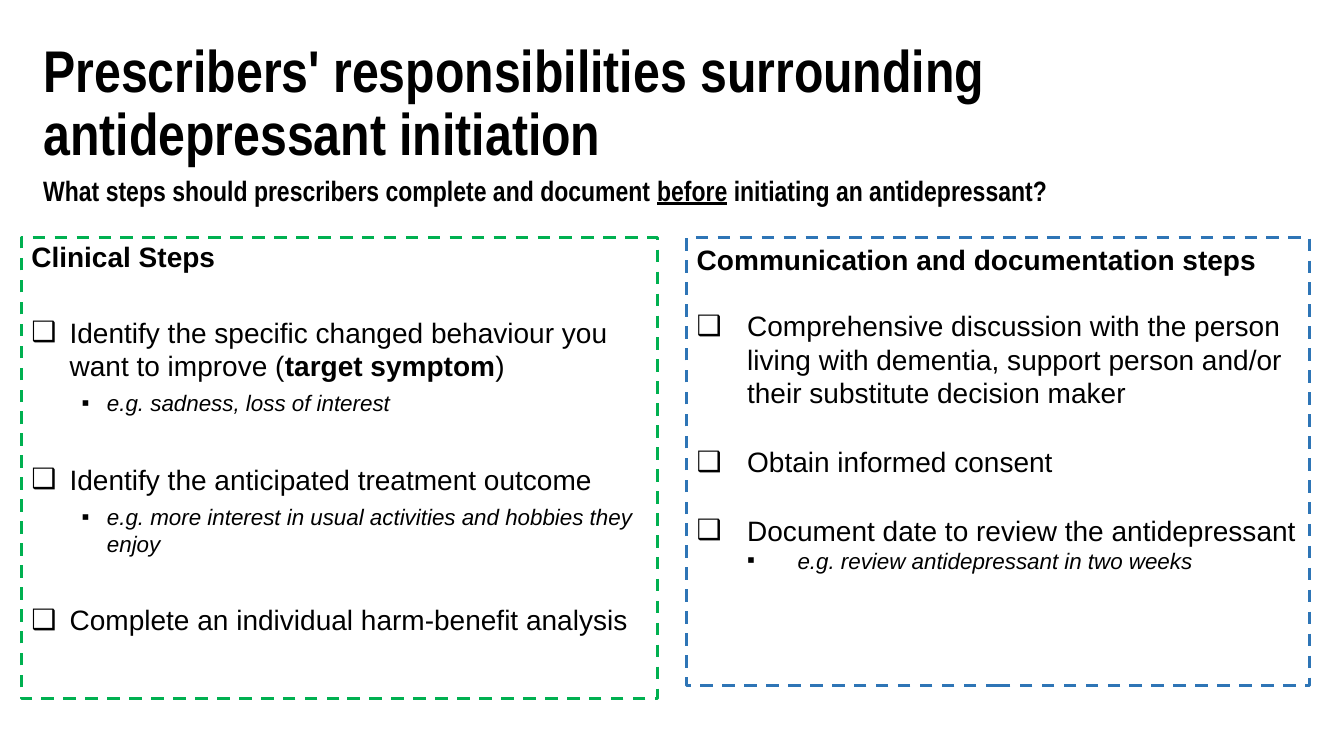
import pptx
import pptx.dml.color
import pptx.enum.dml
import pptx.enum.text
import pptx.oxml.ns
import pptx.util
import lxml.etree

SLIDE_WIDTH, SLIDE_HEIGHT = pptx.util.Inches(13.33), pptx.util.Inches(7.5)
BOX_TOP = 31.47
BOX, SQUARE = "❑", "▪"


def color(value):
    return pptx.dml.color.RGBColor.from_string(value)


class ResponsibilitySlide:
    """Style and element builders; places are percentages of the slide."""
    ink = "000000"
    heading_font, body_font = "Arial Narrow", "Arial"
    step_size, example_size = 20, 16

    def __init__(self, deck):
        self.page = deck.slides.add_slide(deck.slide_layouts.get_by_name("Two Content"))

    def place(self, shape, left, top, width, height):
        shape.left = int(SLIDE_WIDTH * left / 100)
        shape.top = int(SLIDE_HEIGHT * top / 100)
        shape.width = int(SLIDE_WIDTH * width / 100)
        shape.height = int(SLIDE_HEIGHT * height / 100)
        frame = shape.text_frame
        frame.word_wrap = True
        frame.auto_size = pptx.enum.text.MSO_AUTO_SIZE.NONE
        frame.vertical_anchor = pptx.enum.text.MSO_ANCHOR.TOP
        return frame

    def add_text(self, para, text, size, font, bold=False, italic=False, underline=False):
        """Fill a paragraph; text between * signs is underlined or else bold."""
        para.alignment = pptx.enum.text.PP_ALIGN.LEFT
        for index, part in enumerate(text.split("*")):
            marked = index % 2 == 1
            span = para.add_run()
            span.text = part
            span.font.name, span.font.size = font, pptx.util.Pt(size)
            span.font.color.rgb = color(self.ink)
            span.font.bold, span.font.italic = bold or marked, italic
            span.font.underline = underline and marked

    def bullet(self, para, char, margin, hanging):
        props = para._p.get_or_add_pPr()
        props.set("marL", str(pptx.util.Inches(margin)))
        props.set("indent", str(-pptx.util.Inches(hanging)))
        name = pptx.oxml.ns.qn
        if char:
            lxml.etree.SubElement(props, name("a:buFont"), typeface=self.body_font)
            lxml.etree.SubElement(props, name("a:buChar"), char=char)
        else:
            lxml.etree.SubElement(props, name("a:buNone"))

    def heading(self, shape, place, text, size):
        para = self.place(shape, *place).paragraphs[0]
        para.line_spacing, para.space_before = 0.9, pptx.util.Pt(0)
        self.add_text(para, text, size, self.heading_font, bold=True, underline=True)

    def title(self, place, text):
        self.heading(self.page.shapes.title, place, text, 42)

    def question(self, place, text):
        self.heading(self.page.shapes.add_textbox(0, 0, 0, 0), place, text, 20)

    def checklist(self, slot, place, outline, title, items, indents, title_spacing=1.0):
        """Dashed panel; items are (level, space before, text)."""
        panel = self.page.placeholders[slot]
        frame = self.place(panel, *place)
        panel.line.color.rgb = color(outline)
        panel.line.width = pptx.util.Pt(2.25)
        panel.line.dash_style = pptx.enum.dml.MSO_LINE.DASH

        para = frame.paragraphs[0]
        self.bullet(para, None, 0, 0)
        para.line_spacing, para.space_before = title_spacing, pptx.util.Pt(0)
        self.add_text(para, title, self.step_size, self.body_font, bold=True)

        for level, gap, text in items:
            para = frame.add_paragraph()
            para.level = level
            self.bullet(para, (BOX, SQUARE)[level], *indents[level])
            para.line_spacing, para.space_before = 1.0, pptx.util.Pt(gap)
            size = (self.step_size, self.example_size)[level]
            self.add_text(para, text, size, self.body_font, italic=level == 1)


def main():
    deck = pptx.Presentation()
    deck.slide_width, deck.slide_height = SLIDE_WIDTH, SLIDE_HEIGHT
    slide = ResponsibilitySlide(deck)

    # Clinical steps on the left
    slide.checklist(
        1, (1.58, BOX_TOP, 47.34, 60.93), "00B050", "Clinical Steps",
        [(0, 30, "Identify the specific changed behaviour you want to improve (*target symptom*)"),
         (1, 5, "e.g. sadness, loss of interest"),
         (0, 33, "Identify the anticipated treatment outcome"),
         (1, 5, "e.g. more interest in usual activities and hobbies they enjoy"),
         (0, 33, "Complete an individual harm-benefit analysis")],
        [(0.38, 0.38), (0.75, 0.25)], title_spacing=0.9)

    # Communication steps on the right
    slide.checklist(
        2, (51.09, BOX_TOP, 46.36, 59.2), "2E75B6", "Communication and documentation steps",
        [(0, 23, "Comprehensive discussion with the person living with dementia, "
                 "support person and/or their substitute decision maker"),
         (0, 25, "Obtain informed consent"),
         (0, 25, "Document date to review the antidepressant"),
         (1, 0, "e.g. review antidepressant in two weeks")],
        [(0.5, 0.5), (1, 0.5)])

    # Title and question
    slide.title((2.48, 4.8, 75.32, 10.8),
                "Prescribers' responsibilities surrounding antidepressant initiation")
    slide.question((2.48, 22.8, 85.67, 4.93),
                   "What steps should prescribers complete and document *before* "
                   "initiating an antidepressant?")

    deck.save("out.pptx")


if __name__ == "__main__":
    main()
